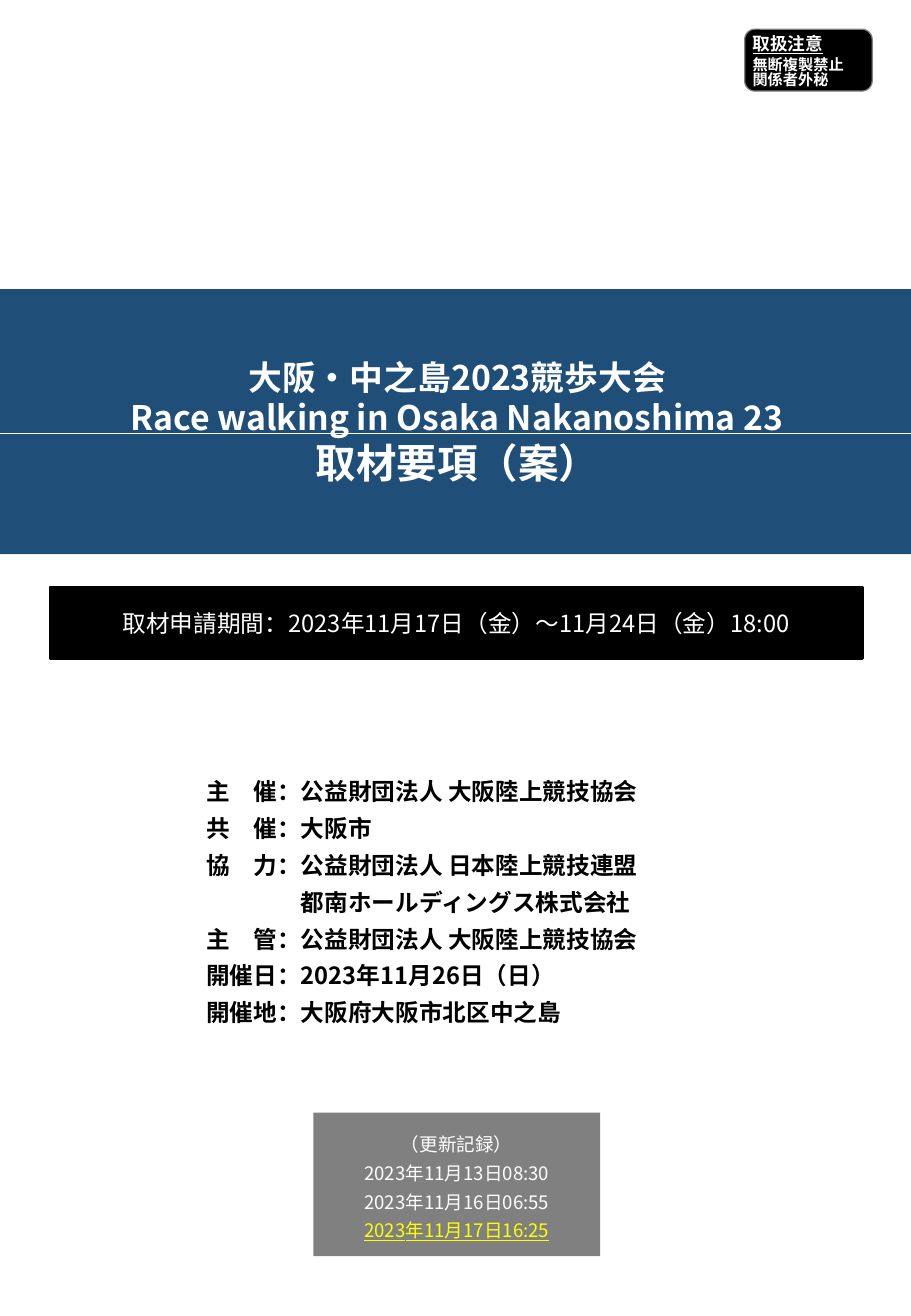
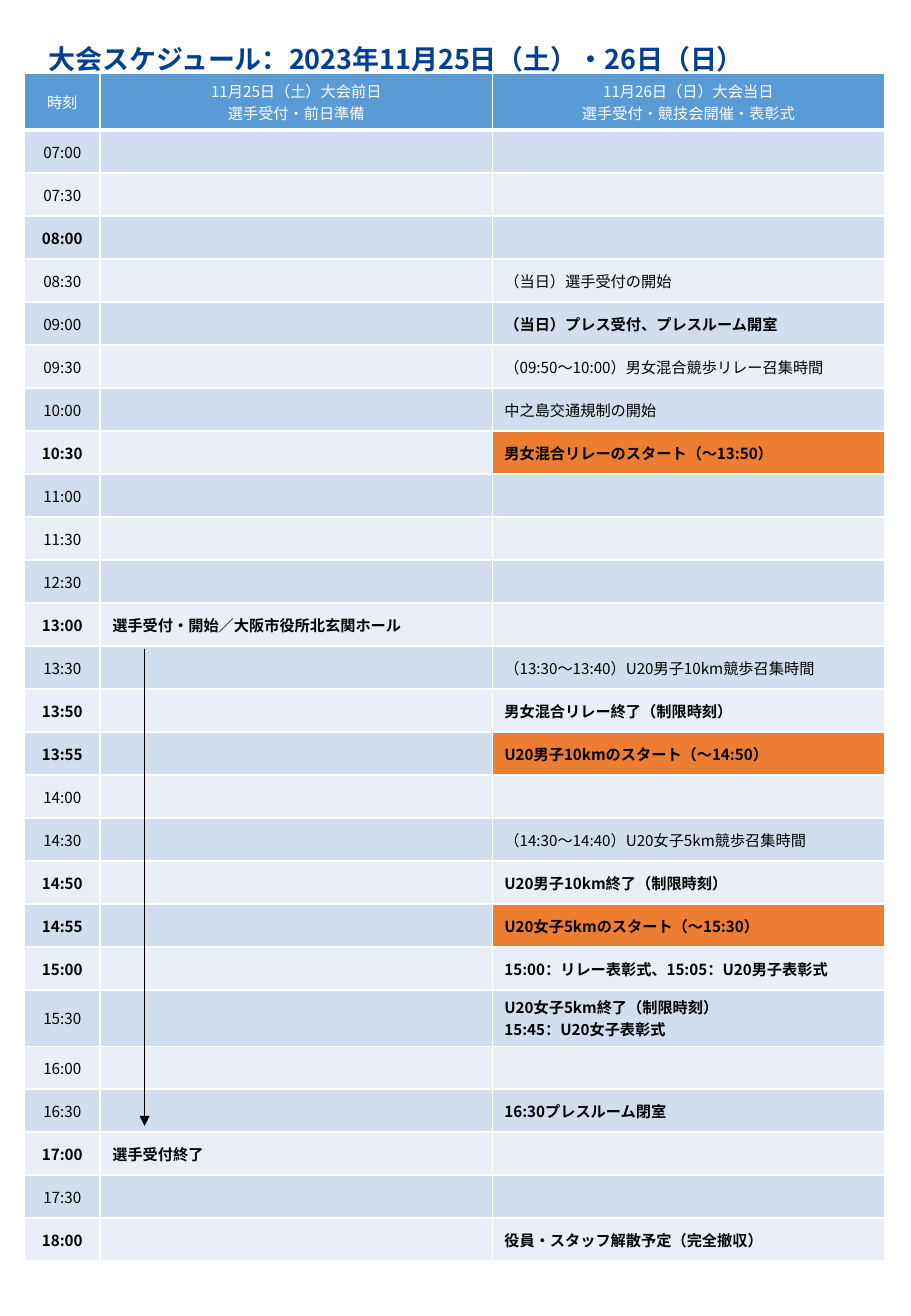
import dataclasses
import typing

import pptx
import pptx.dml.color
import pptx.enum.shapes
import pptx.enum.text
import pptx.oxml.ns
import pptx.util
from lxml import etree

Pt = pptx.util.Pt
qn = pptx.oxml.ns.qn
Align = pptx.enum.text.PP_ALIGN
Anchor = pptx.enum.text.MSO_ANCHOR
Form = pptx.enum.shapes.MSO_SHAPE


@dataclasses.dataclass(frozen=True)
class Theme:
    font: str = "Noto Sans CJK JP"
    white: str = "FFFFFF"
    black: str = "000000"
    navy: str = "1F4E79"
    blue: str = "013F90"
    head: str = "5B9BD5"
    bands: tuple[str, str] = ("D2DEEF", "EAEFF7")
    hot: str = "ED7D31"
    grey: str = "808080"
    edge: str = "7F7F7F"
    yellow: str = "FFFF00"
    huge: float = 24
    large: float = 20
    title: float = 16
    body: float = 14
    log: float = 11
    note: float = 10.5
    small: float = 9


T = Theme()
WIDE, HIGH = 540, 780


@dataclasses.dataclass(frozen=True)
class Line:
    text: str
    size: float
    hue: str = T.black
    bold: bool = False
    under: bool = False
    align: Align = Align.LEFT
    lead: float = 1.0
    after: float = 0
    dent: float = 0


@dataclasses.dataclass(frozen=True)
class Box:
    at: tuple[float, float, float, float]
    lines: tuple[Line, ...] = ()
    fill: str = ""
    edge: str = ""
    width: float = 0
    form: Form = Form.RECTANGLE
    anchor: Anchor = Anchor.MIDDLE
    pads: tuple[float, float, float, float] = (7.2, 3.6, 7.2, 3.6)


class Slot(typing.NamedTuple):
    time: str
    day: str = ""
    eve: str = ""
    key: bool = False
    firm: bool = True
    hot: bool = False


def rgb(hue: str) -> pptx.dml.color.RGBColor:
    return pptx.dml.color.RGBColor.from_string(hue)


def style(item: typing.Any, form: dict[str, typing.Any]) -> None:
    for key, value in form.items():
        setattr(item, key, value)


def write(frame: typing.Any, lines: typing.Sequence[Line]) -> None:
    """Fill a text frame, one paragraph a line."""
    for i, line in enumerate(lines):
        para = frame.add_paragraph() if i else frame.paragraphs[0]
        style(para, {"alignment": line.align, "line_spacing": line.lead,
                     "space_before": Pt(0), "space_after": Pt(line.after)})
        if line.dent:
            para._p.get_or_add_pPr().set("marL", str(Pt(line.dent)))
        if not line.text:
            etree.SubElement(para._p, qn("a:endParaRPr"), sz=str(int(line.size * 100)))
            continue
        run = para.add_run()
        run.text = line.text
        style(run.font, {"name": T.font, "size": Pt(line.size),
                         "bold": line.bold, "underline": line.under})
        run.font.color.rgb = rgb(line.hue)
        etree.SubElement(run._r.get_or_add_rPr(), qn("a:ea"), typeface=T.font)


def setup(frame: typing.Any, box: Box) -> None:
    left, top, right, low = map(Pt, box.pads)
    style(frame, {"word_wrap": True, "auto_size": pptx.enum.text.MSO_AUTO_SIZE.NONE,
                  "vertical_anchor": box.anchor, "margin_left": left,
                  "margin_top": top, "margin_right": right, "margin_bottom": low})
    write(frame, box.lines)


def draw(slide: typing.Any, box: Box) -> None:
    """Draw a filled shape, or a text box when there is no fill."""
    at = map(Pt, box.at)
    if not box.fill:
        setup(slide.shapes.add_textbox(*at).text_frame, box)
        return
    shape = slide.shapes.add_shape(box.form, *at)
    shape.shadow.inherit = False
    shape.fill.solid()
    shape.fill.fore_color.rgb = rgb(box.fill)
    if box.edge:
        shape.line.color.rgb = rgb(box.edge)
        shape.line.width = Pt(box.width)
    else:
        shape.line.fill.background()
    setup(shape.text_frame, box)


def head(slide: typing.Any, box: Box) -> None:
    """Place the title and bring it to the front."""
    title = slide.shapes.title
    style(title, dict(zip(("left", "top", "width", "height"), map(Pt, box.at))))
    setup(title.text_frame, box)
    slide.shapes._spTree.append(title._element)


def rule(slide: typing.Any, ends: tuple[float, float, float, float],
         hue: str, width: float, arrow: bool = False) -> None:
    line = slide.shapes.add_connector(
        pptx.enum.shapes.MSO_CONNECTOR.STRAIGHT, *map(Pt, ends))
    line.line.color.rgb = rgb(hue)
    line.line.width = Pt(width)
    if arrow:
        etree.SubElement(line.line._get_or_add_ln(), qn("a:tailEnd"), type="triangle")
    etree.SubElement(line._element.spPr, qn("a:effectLst"))


def paint(cell: typing.Any, lines: typing.Sequence[Line], fill: str,
          top: float, low: float) -> None:
    """Give a table cell its borders, fill and text."""
    rim = cell._tc.get_or_add_tcPr()
    for side, width in zip("LRTB", (1, 1, top, low)):
        edge = etree.SubElement(rim, qn(f"a:ln{side}"), w=str(Pt(width)))
        solid = etree.SubElement(edge, qn("a:solidFill"))
        etree.SubElement(solid, qn("a:srgbClr"), val=T.white)
    cell.fill.solid()
    cell.fill.fore_color.rgb = rgb(fill)
    cell.vertical_anchor = Anchor.MIDDLE
    write(cell.text_frame, lines)


# Cover text
COVER = Box((58.3, 198.7, 425.5, 102.2), tuple(
    Line(text, size, T.white, True, align=Align.CENTER) for text, size in (
        ("大阪・中之島2023競歩大会", T.large),
        ("Race walking in Osaka Nakanoshima 23", T.large),
        ("取材要項（案）", T.huge))))
BADGE = Box((441.4, 17.3, 75.6, 36.7), (
    Line("取扱注意", T.note, T.white, True, True, Align.JUSTIFY, 0.8, 3),
    *(Line(text, T.small, T.white, True, align=Align.JUSTIFY, lead=0.8)
      for text in ("無断複製禁止", "関係者外秘"))),
    T.black, T.edge, 0.75, Form.ROUNDED_RECTANGLE, Anchor.BOTTOM, (2.9, 0, 2.9, 0))
TERM = Box((29.5, 347.8, 481.7, 42.5), (
    Line("取材申請期間：2023年11月17日（金）～11月24日（金）18:00",
         T.body, T.white, align=Align.CENTER),),
    T.black, T.black, 1.5, pads=(2.9,) * 4)
HOSTS = Box((115.2, 447.1, 311.8, 169.9), tuple(
    Line(text, T.body, bold=True, lead=1.3, dent=dent) for text, dent in (
        ("主　催：公益財団法人 大阪陸上競技協会", 0),
        ("共　催：大阪市", 0),
        ("協　力：公益財団法人 日本陸上競技連盟", 0),
        ("都南ホールディングス株式会社", 4 * T.body),
        ("主　管：公益財団法人 大阪陸上競技協会", 0),
        ("開催日：2023年11月26日（日）", 0),
        ("開催地：大阪府大阪市北区中之島", 0))))
LOG = Box((185.8, 659.5, 169.9, 85), tuple(
    Line(text, T.log, T.yellow if new else T.white, under=new,
         align=Align.CENTER, lead=1.3) for text, new in (
        ("（更新記録）", False), ("2023年11月13日08:30", False),
        ("2023年11月16日06:55", False), ("2023年11月17日16:25", True))),
    T.grey, pads=(7.2, 2.9, 7.2, 3.6))
BAND = Box((-5, 171.4, 553, 157), fill=T.navy)

# Schedule text
PLAN = Box((21.6, 20.9, 510.5, 28.1), (
    Line("大会スケジュール：2023年11月25日（土）・26日（日）", T.title, T.blue, True),))
HEADS = ("時刻", "11月25日（土）大会前日\n選手受付・前日準備",
         "11月26日（日）大会当日\n選手受付・競技会開催・表彰式")
SLOTS = (
    Slot("07:00"),
    Slot("07:30"),
    Slot("08:00", key=True),
    Slot("08:30", "（当日）選手受付の開始", firm=False),
    Slot("09:00", "（当日）プレス受付、プレスルーム開室"),
    Slot("09:30", "（09:50～10:00）男女混合競歩リレー召集時間", firm=False),
    Slot("10:00", "中之島交通規制の開始", firm=False),
    Slot("10:30", "男女混合リレーのスタート（～13:50）", key=True, hot=True),
    Slot("11:00"),
    Slot("11:30"),
    Slot("12:30"),
    Slot("13:00", eve="選手受付・開始／大阪市役所北玄関ホール", key=True),
    Slot("13:30", "（13:30～13:40）U20男子10km競歩召集時間", firm=False),
    Slot("13:50", "男女混合リレー終了（制限時刻）", key=True),
    Slot("13:55", "U20男子10kmのスタート（～14:50）", key=True, hot=True),
    Slot("14:00"),
    Slot("14:30", "（14:30～14:40）U20女子5km競歩召集時間", firm=False),
    Slot("14:50", "U20男子10km終了（制限時刻）", key=True),
    Slot("14:55", "U20女子5kmのスタート（～15:30）", key=True, hot=True),
    Slot("15:00", "15:00：リレー表彰式、15:05：U20男子表彰式", key=True),
    Slot("15:30", "U20女子5km終了（制限時刻）\n15:45：U20女子表彰式"),
    Slot("16:00"),
    Slot("16:30", "16:30プレスルーム閉室"),
    Slot("17:00", eve="選手受付終了", key=True),
    Slot("17:30"),
    Slot("18:00", "役員・スタッフ解散予定（完全撤収）", key=True),
)


def split(text: str, bold: bool = False, hue: str = T.black,
          align: Align = Align.LEFT) -> list[Line]:
    return [Line(part, T.small, hue, bold, align=align) for part in text.split("\n")]


def chart(slide: typing.Any) -> None:
    """Draw the timetable."""
    cols, tall, row = (45, 232.4, 232.4), 31.2, 25.5
    grid = slide.shapes.add_table(
        len(SLOTS) + 1, len(cols), Pt(14.4), Pt(43.7),
        Pt(sum(cols)), Pt(tall + row * len(SLOTS))).table
    for col, width in zip(grid.columns, cols):
        col.width = Pt(width)
    for i, line in enumerate(grid.rows):
        line.height = Pt(row if i else tall)
    for i, text in enumerate(HEADS):
        paint(grid.cell(0, i), split(text, hue=T.white, align=Align.CENTER), T.head, 1, 3)
    for i, slot in enumerate(SLOTS, 1):
        fill = T.bands[(i - 1) % 2]
        cells = ((split(slot.time, slot.key, align=Align.CENTER), fill),
                 (split(slot.eve, True), fill),
                 (split(slot.day, slot.firm), T.hot if slot.hot else fill))
        for j, (lines, hue) in enumerate(cells):
            paint(grid.cell(i, j), lines, hue, 3 if i == 1 else 1, 1)


def main() -> None:
    deck = pptx.Presentation()
    style(deck, {"slide_width": Pt(WIDE), "slide_height": Pt(HIGH)})
    cover, plan = (deck.slides.add_slide(deck.slide_layouts[5]) for _ in range(2))

    # Cover
    for box in (BADGE, TERM, BAND):
        draw(cover, box)
    rule(cover, (-5, 257, 547, 257), T.white, 0.25)
    head(cover, COVER)
    for box in (HOSTS, LOG):
        draw(cover, box)

    # Schedule
    chart(plan)
    head(plan, PLAN)
    rule(plan, (85.7, 384.5, 85.7, 667.4), T.black, 0.5, True)
    deck.save("out.pptx")


if __name__ == "__main__":
    main()
